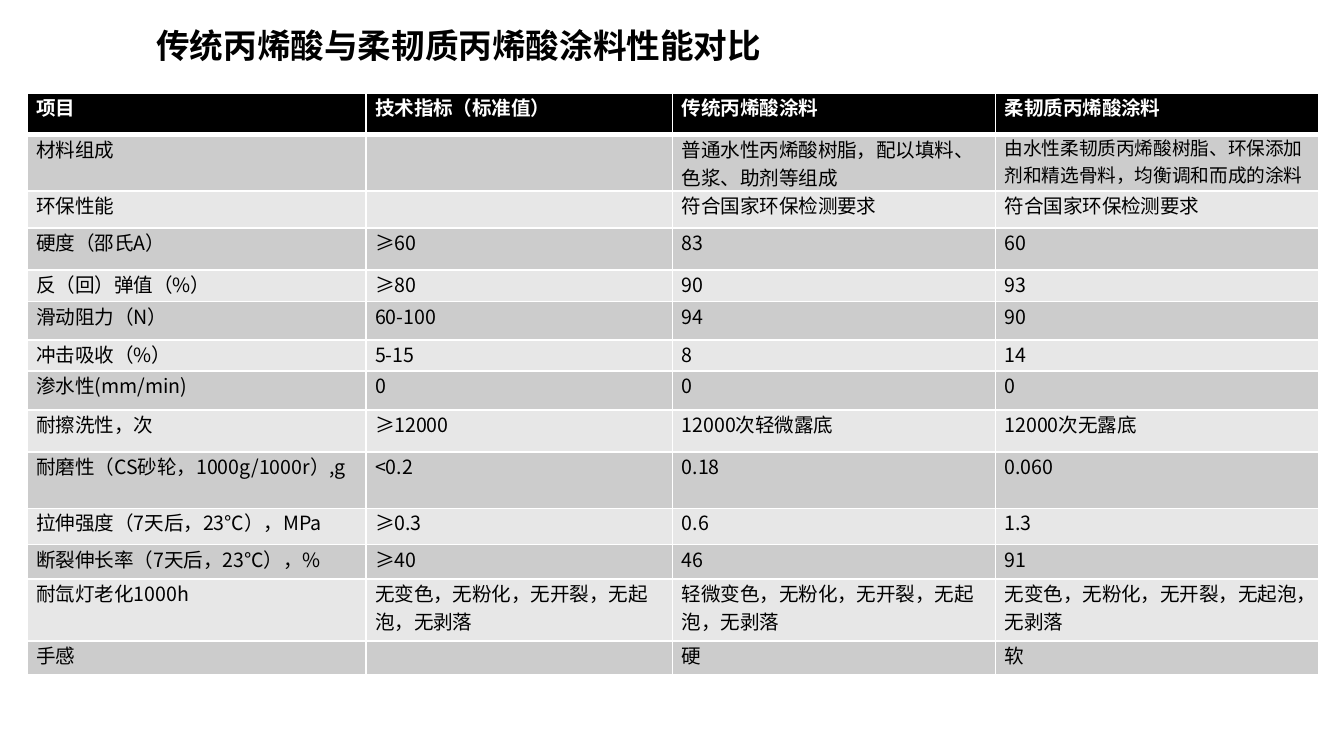
from dataclasses import dataclass

from lxml.etree import SubElement
from pptx import Presentation
from pptx.dml.color import RGBColor
from pptx.enum.lang import MSO_LANGUAGE_ID
from pptx.enum.text import MSO_ANCHOR, PP_ALIGN
from pptx.oxml import parse_xml
from pptx.oxml.ns import nsdecls, qn
from pptx.slide import Slide
from pptx.table import _Cell
from pptx.text.text import _Paragraph
from pptx.util import Pt


@dataclass(frozen=True)
class Theme:
    face: str = "Noto Sans CJK SC"
    ink: str = "000000"
    paper: str = "FFFFFF"
    bands: tuple[str, str] = ("CCCCCC", "E7E7E7")
    title: float = 18
    text: float = 10.5
    small: float = 10
    rule: float = 1
    thick: float = 3


@dataclass(frozen=True)
class Row:
    height: float
    texts: tuple[str, str, str, str]
    last: float = Theme.text  # type size of the last column


THEME = Theme()
TITLE = "传统丙烯酸与柔韧质丙烯酸涂料性能对比"
WIDTHS = (181.5, 164.3, 173, 173)
HEAD = Row(22, ("项目", "技术指标（标准值）", "传统丙烯酸涂料", "柔韧质丙烯酸涂料"))
BODY = (
    Row(28, ("材料组成", "", "普通水性丙烯酸树脂，配以填料、色浆、助剂等组成",
             "由水性柔韧质丙烯酸树脂、环保添加剂和精选骨料，均衡调和而成的涂料"),
        THEME.small),
    Row(20, ("环保性能", "", "符合国家环保检测要求", "符合国家环保检测要求")),
    Row(22.5, ("硬度（邵氏A）", "≥60", "83", "60")),
    Row(16.7, ("反（回）弹值（%）", "≥80", "90", "93")),
    Row(20.7, ("滑动阻力（N）", "60-100", "94", "90")),
    Row(16.7, ("冲击吸收（%）", "5-15", "8", "14")),
    Row(20.7, ("渗水性(mm/min)", "0", "0", "0")),
    Row(22.5, ("耐擦洗性，次", "≥12000", "12000次轻微露底", "12000次无露底")),
    Row(16.7, ("耐磨性（CS砂轮，1000g/1000r）,g", "<0.2", "0.18", "0.060")),
    Row(19.4, ("拉伸强度（7天后，23℃），MPa", "≥0.3", "0.6", "1.3")),
    Row(18.4, ("断裂伸长率（7天后，23℃），%", "≥40", "46", "91")),
    Row(33.2, ("耐氙灯老化1000h", "无变色，无粉化，无开裂，无起泡，无剥落",
               "轻微变色，无粉化，无开裂，无起泡，无剥落",
               "无变色，无粉化，无开裂，无起泡，无剥落")),
    Row(18, ("手感", "", "硬", "软")),
)


def write(para: _Paragraph, text: str, size: float, tint: str, bold: bool) -> None:
    """Add one run, or size the empty line when there is no text."""
    if not text:
        SubElement(para._p, qn("a:endParaRPr"), sz=str(int(size * 100)))
        return
    run = para.add_run()
    run.text = text
    font = run.font
    font.size, font.bold, font.name = Pt(size), bold, THEME.face
    font.language_id = MSO_LANGUAGE_ID.SIMPLIFIED_CHINESE
    font.color.rgb = RGBColor.from_string(tint)
    SubElement(font._element, qn("a:ea"), typeface=THEME.face)


def edge(cell: _Cell, base: float) -> None:
    """Rule all four sides; base is the width of the bottom one."""
    sides = {"lnL": THEME.rule, "lnR": THEME.rule, "lnT": THEME.rule, "lnB": base}
    for spot, (tag, width) in enumerate(sides.items()):
        line = parse_xml(
            f'<a:{tag} {nsdecls("a")} w="{Pt(width)}"><a:solidFill>'
            f'<a:srgbClr val="{THEME.paper}"/></a:solidFill></a:{tag}>')
        cell._tc.get_or_add_tcPr().insert(spot, line)


def paint(cell: _Cell, text: str, size: float, fill: str, head: bool) -> None:
    cell.margin_left = cell.margin_right = Pt(5)
    cell.margin_top = cell.margin_bottom = 0
    cell.fill.solid()
    cell.fill.fore_color.rgb = RGBColor.from_string(fill)
    para = cell.text_frame.paragraphs[0]
    if head:
        para.alignment = PP_ALIGN.JUSTIFY
    write(para, text, size, THEME.paper if head else THEME.ink, head)
    edge(cell, THEME.thick if head else THEME.rule)


def add_title(slide: Slide) -> None:
    title = slide.shapes.title
    title.left, title.top, title.width, title.height = Pt(76.5), Pt(10), Pt(344), Pt(29)
    frame = title.text_frame
    frame.word_wrap = False
    frame.vertical_anchor = MSO_ANCHOR.TOP
    para = frame.paragraphs[0]
    para.alignment = PP_ALIGN.LEFT
    write(para, TITLE, THEME.title, THEME.ink, True)


def add_grid(slide: Slide) -> None:
    rows = (HEAD, *BODY)
    table = slide.shapes.add_table(
        len(rows), len(WIDTHS), Pt(14.5), Pt(50), Pt(sum(WIDTHS)),
        Pt(sum(row.height for row in rows))).table
    for column, width in zip(table.columns, WIDTHS):
        column.width = Pt(width)
    for i, row in enumerate(rows):
        table.rows[i].height = Pt(row.height)
        head = row is HEAD
        fill = THEME.ink if head else THEME.bands[(i - 1) % 2]
        sizes = (THEME.text,) * 3 + (row.last,)
        for j, (text, size) in enumerate(zip(row.texts, sizes)):
            paint(table.cell(i, j), text, size, fill, head)


def main() -> None:
    deck = Presentation()
    deck.slide_width, deck.slide_height = Pt(720), Pt(405)
    slide = deck.slides.add_slide(deck.slide_layouts.get_by_name("Title Only"))
    add_grid(slide)
    add_title(slide)
    deck.save("out.pptx")


if __name__ == "__main__":
    main()
